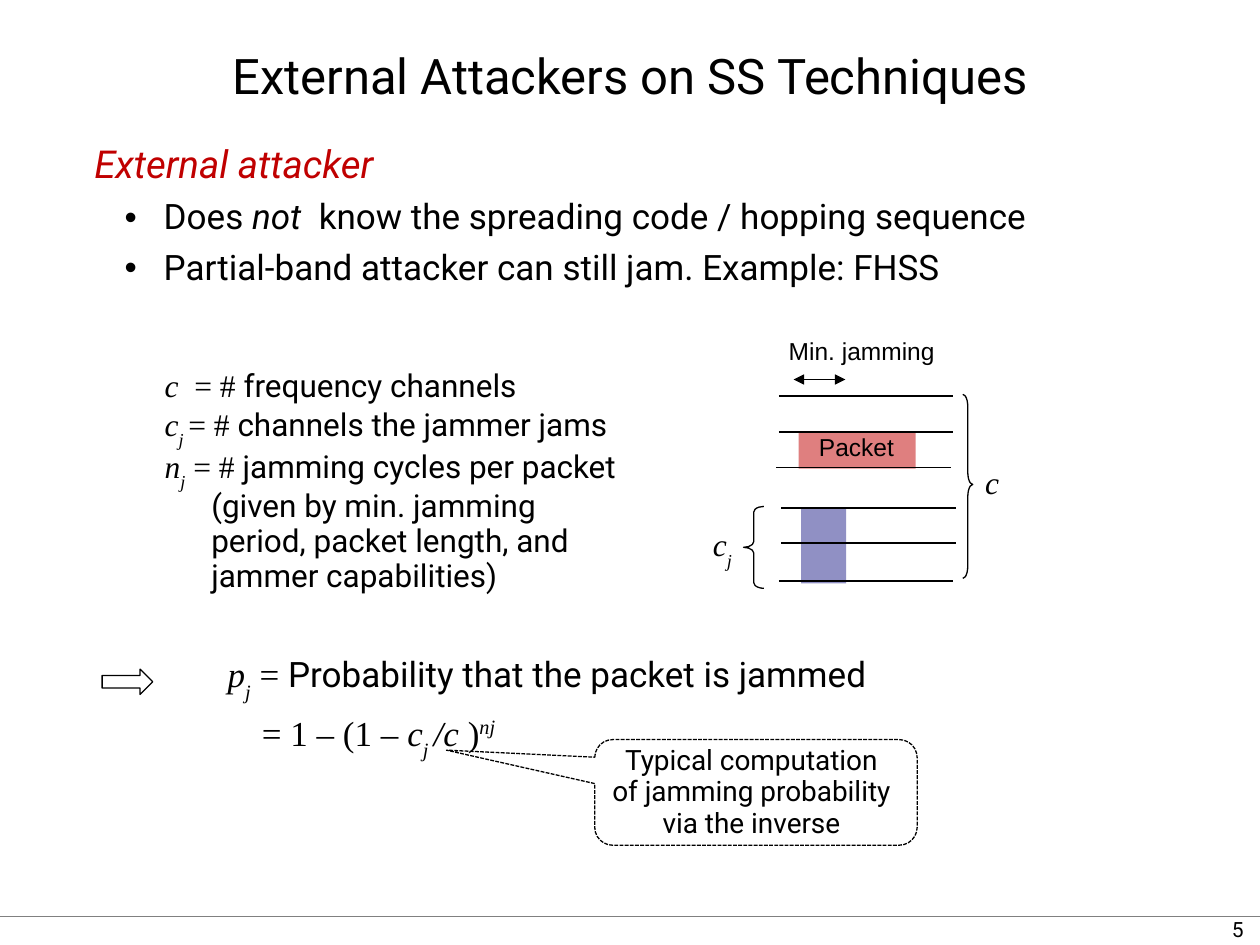
from lxml import etree
from pptx import Presentation
from pptx.dml.color import RGBColor
from pptx.enum.dml import MSO_LINE
from pptx.enum.shapes import MSO_CONNECTOR, MSO_SHAPE
from pptx.enum.text import MSO_ANCHOR, MSO_AUTO_SIZE, PP_ALIGN
from pptx.oxml.ns import qn
from pptx.util import Cm, Pt

LEFT, CENTER, RIGHT = PP_ALIGN.LEFT, PP_ALIGN.CENTER, PP_ALIGN.RIGHT
MIDDLE, TOP = MSO_ANCHOR.MIDDLE, MSO_ANCHOR.TOP
STRAIGHT = MSO_CONNECTOR.STRAIGHT
RECT, ARROW = MSO_SHAPE.RECTANGLE, MSO_SHAPE.RIGHT_ARROW
LEFT_BRACE, RIGHT_BRACE = MSO_SHAPE.LEFT_BRACE, MSO_SHAPE.RIGHT_BRACE
CALLOUT = MSO_SHAPE.ROUNDED_RECTANGULAR_CALLOUT
DASH = MSO_LINE.SQUARE_DOT


class Theme:
    black, grey = RGBColor(0, 0, 0), RGBColor(0x80, 0x80, 0x80)
    red, blue = RGBColor(0xC0, 0, 0), RGBColor(0x22, 0x22, 0x8B)
    title, heading, body, label, note, small, number = 28, 22, 20, 18, 16, 14, 12
    sans, serif, plain = "Roboto", "Times New Roman", "Arial"
    hairline = Pt(0.75)
    styles = {
        "text": (sans, False, 0),
        "em": (sans, True, 0),
        "plain": (plain, False, 0),
        "math": (serif, False, 0),
        "var": (serif, True, 0),
        "sub": (serif, True, -33000),
        "sup": (serif, True, 33000),
    }


def write(tf, *runs, size, color=Theme.black, align=LEFT, spacing=0.93,
          before=0, margin=0, indent=0, bullet=None, level=0):
    p = tf.paragraphs[0]
    if p.runs:
        p = tf.add_paragraph()
    p.level = level
    pPr = p._p.get_or_add_pPr()
    pPr.set("marL", str(Cm(margin)))
    pPr.set("indent", str(Cm(indent)))
    if bullet:
        etree.SubElement(pPr, qn("a:buChar")).set("char", bullet)
    else:
        etree.SubElement(pPr, qn("a:buNone"))
    p.alignment, p.line_spacing, p.space_before = align, spacing, Pt(before)
    for text, style in runs:
        for i, part in enumerate(text.split("\n")):
            if i:
                p.add_line_break()
            r = p.add_run()
            r.text = part
            font, italic, baseline = Theme.styles[style]
            r.font.name, r.font.size, r.font.italic = font, Pt(size), italic
            r.font.color.rgb = color
            if baseline:
                r._r.get_or_add_rPr().set("baseline", str(baseline))


def add_line(x1, y1, x2, y2, color=Theme.black):
    cn = s.shapes.add_connector(STRAIGHT, Cm(x1), Cm(y1), Cm(x2), Cm(y2))
    cn.line.color.rgb = color
    cn.line.width = Theme.hairline
    etree.SubElement(cn._element.spPr, qn("a:effectLst"))
    return cn


prs = Presentation()
prs.slide_width, prs.slide_height = Cm(25.4), Cm(19.05)
s = prs.slides.add_slide(prs.slide_layouts[1])

add_line(0, 18.47, 25.4, 18.47, color=Theme.grey)

title, body = s.shapes.title, s.placeholders[1]
for sp, box, top, anchor in [
    (title, (0, 0.51, 25.4, 2.08), 0, MIDDLE),
    (body, (1.9, 2.84, 21.6, 14.58), 0.03, TOP),
]:
    sp.left, sp.top, sp.width, sp.height = map(Cm, box)
    tf = sp.text_frame
    tf.auto_size, tf.vertical_anchor = MSO_AUTO_SIZE.NONE, anchor
    tf.margin_left = tf.margin_right = tf.margin_bottom = 0
    tf.margin_top = Cm(top)

write(title.text_frame, ("External Attackers on SS Techniques", "text"),
      size=Theme.title, align=CENTER, spacing=0.97)

tf = body.text_frame
write(tf, ("External attacker", "em"), size=Theme.heading, color=Theme.red, spacing=0.98)
for runs in [
    [("Does ", "text"), ("not", "em"),
     ("  know the spreading code / hopping sequence", "text")],
    [("Partial-band attacker can still jam. Example: FHSS", "text")],
]:
    write(tf, *runs, size=Theme.body, spacing=0.97, before=5.5,
          margin=1.4, indent=-0.79, bullet="•", level=1)
write(tf, ("p", "var"), ("j", "sub"), (" =", "math"),
      (" Probability that the packet is jammed", "text"),
      size=Theme.body, spacing=0.97, before=208, margin=2.69, level=1)
write(tf, ("= 1 – (1 – ", "math"), ("c", "var"), ("j ", "sub"), ("/c ", "var"),
      (")", "math"), ("nj", "sup"),
      size=Theme.body, spacing=0.97, before=5.5, margin=3.38, level=1)

for kind, box, adjustments, fill in [
    (ARROW, (2.06, 13.49, 1.02, 0.51), (), None),
    (RECT, (16.1, 8.71, 2.36, 0.74), (), Theme.red),
    (RECT, (16.15, 10.24, 0.91, 1.52), (), Theme.blue),
    (RIGHT_BRACE, (19.41, 7.95, 0.2, 3.71), (1.25, 0.49), None),
    (LEFT_BRACE, (14.99, 10.21, 0.41, 1.65), (0.28, 0.5), None),
    (CALLOUT, (11.99, 14.91, 6.5, 2.13), (-0.96, -0.4, 0.17), None),
]:
    sp = s.shapes.add_shape(kind, *map(Cm, box))
    sp.shadow.inherit = False
    for i, value in enumerate(adjustments):
        sp.adjustments[i] = value
    if fill:
        sp.fill.solid()
        sp.fill.fore_color.rgb = fill
        clr = sp._element.spPr.find(".//" + qn("a:srgbClr"))
        etree.SubElement(clr, qn("a:alpha")).set("val", "50000")
        sp.line.fill.background()
    else:
        sp.fill.background()
        sp.line.color.rgb = Theme.black
        sp.line.width = Theme.hairline
    if kind == CALLOUT:
        sp.line.dash_style = DASH
        tf = sp.text_frame
        tf.vertical_anchor, tf.margin_left, tf.margin_right = MIDDLE, 0, Cm(0.18)
        write(tf, ("Typical computation\nof jamming probability\nvia the inverse", "text"),
              size=Theme.note, align=CENTER)

for x, ys in [(15.7, (7.98, 8.71, 11.71)), (15.65, (9.42,)), (15.75, (10.24, 10.95))]:
    for y in ys:
        add_line(x, y, x + 3.52, y)

period = add_line(16, 7.65, 17.04, 7.65)
ln = period.line._get_or_add_ln()
for end in ("a:headEnd", "a:tailEnd"):
    etree.SubElement(ln, qn(end)).set("type", "triangle")

for box, top, size, align, paragraphs in [
    ((20.04, 18.39, 5.28, 0.66), 0.13, Theme.number, RIGHT, [[("5", "text")]]),
    ((19.61, 9.22, 1.09, 1.22), 0.18, Theme.label, LEFT, [[("c", "var")]]),
    ((14.12, 10.41, 1.22, 1.35), 0.18, Theme.label, LEFT, [[("c", "var"), ("j", "sub")]]),
    ((15.65, 6.68, 4.72, 1.12), 0.15, Theme.small, LEFT, [[("Min. jamming", "plain")]]),
    ((16.26, 8.61, 3.35, 1.02), 0.15, Theme.small, LEFT, [[("Packet", "plain")]]),
    ((3.07, 7.32, 10.24, 4.55), 0.13, Theme.label, LEFT, [
        [("c", "var"), ("  = # ", "math"), ("frequency channels", "text")],
        [("c", "var"), ("j ", "sub"), ("= # ", "math"), ("channels the jammer jams", "text")],
        [("n", "var"), ("j", "sub"), (" = # ", "math"), ("jamming cycles per packet", "text")],
        [("(given by min. jamming\nperiod, packet length, and\njammer capabilities)", "text")],
    ]),
]:
    tf = s.shapes.add_textbox(*map(Cm, box)).text_frame
    tf.word_wrap, tf.margin_top = True, Cm(top)
    for runs in paragraphs:
        write(tf, *runs, size=size, align=align,
              margin=0.94 if runs[0][0].startswith("(") else 0)

prs.save("out.pptx")
